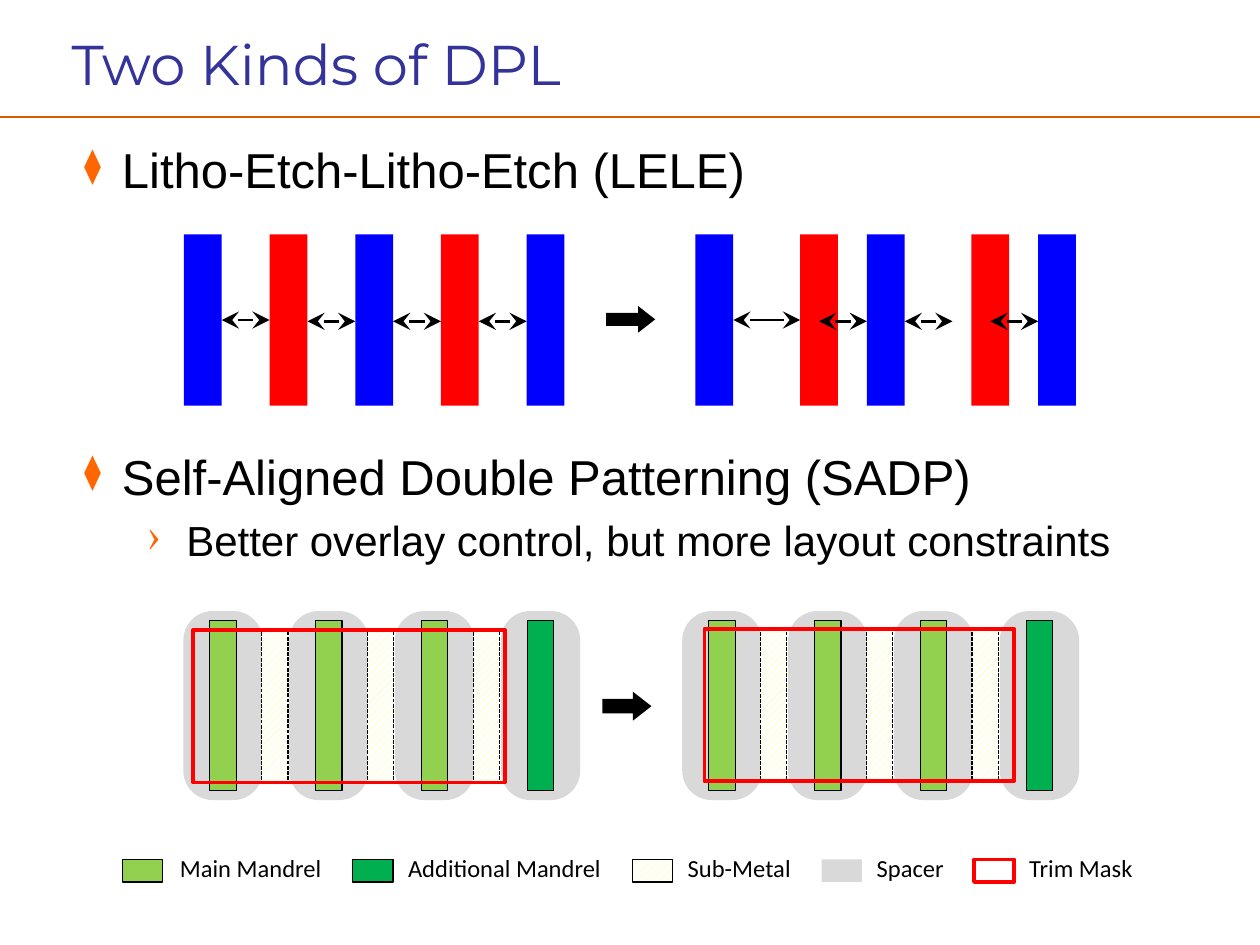
from lxml.etree import SubElement
from pptx import Presentation
from pptx.dml.color import RGBColor
from pptx.enum.dml import MSO_LINE, MSO_PATTERN
from pptx.enum.shapes import MSO_CONNECTOR, MSO_SHAPE
from pptx.enum.text import MSO_ANCHOR
from pptx.oxml.ns import qn
from pptx.util import Inches, Pt

BLACK, BLUE, RED, ORANGE = "000000", "0000FF", "FF0000", "FF6600"
HATCH = "hatch"

# fill, line colour, line width
STYLES = {
    "main": ("92D050", BLACK, 0.75),
    "additional": ("00B050", BLACK, 0.75),
    "sub-metal": (HATCH, BLACK, 0.75),
    "spacer": ("D9D9D9", None, 0),
    "trim": (None, RED, 2),
}
TITLE = "Two Kinds of DPL"
# text, size, space before, left margin, indent, bullet, bullet size
BULLETS = [
    ("Litho-Etch-Litho-Etch (LELE)", 28, 0, 0.43, -0.3, "⧫", 70),
    ("Self-Aligned Double Patterning (SADP)", 28, 141.5, 0.43, -0.3, "⧫", 70),
    ("Better overlay control, but more layout constraints", 24, 5.5, 0.94, -0.31, "›", 100),
]
# left edge of the first bar, overlay shift of the red bars
LELE_PANELS = [(1.46, 0), (5.52, 0.15)]
# centre of the first mandrel, trim mask box
SADP_PANELS = [
    (5.73, (5.59, 4.99, 2.46, 1.21)),
    (1.77, (1.53, 5, 2.48, 1.21)),
]
STEP_ARROWS = [(4.81, 2.43, 0.39, 0.21), (4.78, 5.49, 0.39, 0.23)]
# style, label, swatch left, label left, label width
LEGEND = [
    ("main", "Main Mandrel", 0.97, 1.33, 1.34),
    ("additional", "Additional Mandrel", 2.8, 3.14, 1.75),
    ("sub-metal", "Sub-Metal", 5.02, 5.36, 1.03),
    ("spacer", "Spacer", 6.52, 6.86, 0.74),
    ("trim", "Trim Mask", 7.73, 8.07, 1.03),
]

BAR_TOP, BAR_WIDTH, BAR_HEIGHT, BAR_PITCH = 1.86, 0.3, 1.36, 0.68
SADP_MIDDLE, SADP_PITCH, SUB_OFFSET = 5.6, 0.84, 0.41


def color(value):
    return RGBColor.from_string(value)


def add_shape(page, kind, place, fill=None, line=None, width=0):
    shape = page.shapes.add_shape(kind, *map(Inches, place))
    shape.shadow.inherit = False
    if fill == HATCH:
        shape.fill.patterned()
        shape.fill.pattern = MSO_PATTERN.WIDE_UPWARD_DIAGONAL
        shape.fill.fore_color.rgb = color("FFFF66")
        shape.fill.back_color.rgb = color("FFFFFF")
    elif fill:
        shape.fill.solid()
        shape.fill.fore_color.rgb = color(fill)
    else:
        shape.fill.background()
    if line:
        shape.line.color.rgb = color(line)
        shape.line.width = Pt(width)
    else:
        shape.line.fill.background()
    return shape


def add_line(page, start, end, y, line, width, arrows=False):
    connector = page.shapes.add_connector(
        MSO_CONNECTOR.STRAIGHT, *map(Inches, (start, y, end, y)))
    connector.line.color.rgb = color(line)
    connector.line.width = Pt(width)
    if arrows:
        for tag in ("a:headEnd", "a:tailEnd"):
            SubElement(connector.line._get_or_add_ln(), qn(tag),
                       type="stealth", w="lg", len="lg")
    SubElement(connector._element.spPr, qn("a:effectLst"))


def add_text_box(page, place, wrap=True):
    box = page.shapes.add_textbox(*map(Inches, place))
    box.text_frame.word_wrap = wrap
    return box.text_frame


def set_font(para, name, size, value):
    para.font.name = name
    para.font.size = Pt(size)
    para.font.color.rgb = color(value)


def add_heading(page):
    add_line(page, 0, 10, 0.93, "D55C01", 1)
    frame = add_text_box(page, (0.47, 0.11, 9.05, 0.78))
    frame.vertical_anchor = MSO_ANCHOR.MIDDLE
    frame.text = TITLE
    set_font(frame.paragraphs[0], "Montserrat", 32, "333399")


def add_bullets(page):
    frame = add_text_box(page, (0.44, 1.06, 9.16, 5.8))
    frame.text = "\n".join(item[0] for item in BULLETS)
    for para, item in zip(frame.paragraphs, BULLETS):
        _, size, before, margin, indent, char, percent = item
        properties = para._p.get_or_add_pPr()
        properties.set("marL", str(Inches(margin)))
        properties.set("indent", str(Inches(indent)))
        SubElement(SubElement(properties, qn("a:buClr")), qn("a:srgbClr"), val=ORANGE)
        SubElement(properties, qn("a:buSzPct"), val=str(percent * 1000))
        SubElement(properties, qn("a:buChar"), char=char)
        para.space_before = Pt(before)
        set_font(para, "Arial", size, BLACK)


def add_lele_panel(page, left, shift):
    starts = [left + i * BAR_PITCH for i in range(5)]
    for i, start in enumerate(starts):
        offset, fill = (shift, RED) if i % 2 else (0, BLUE)
        add_shape(page, MSO_SHAPE.RECTANGLE,
                  (start + offset, BAR_TOP, BAR_WIDTH, BAR_HEIGHT), fill)
    for i, (start, following) in enumerate(zip(starts, starts[1:])):
        end, y = (following, 2.55) if i else (following + shift, 2.54)
        add_line(page, start + BAR_WIDTH, end, y, BLACK, 1.5, arrows=True)


def add_sadp_panel(page, first, trim_place):
    def add_strip(center, width, height, style, kind=MSO_SHAPE.RECTANGLE):
        place = (center - width / 2, SADP_MIDDLE - height / 2, width, height)
        return add_shape(page, kind, place, *STYLES[style])

    centers = [first + i * SADP_PITCH for i in range(4)]
    for center in centers:
        spacer = add_strip(center, 0.63, 1.5, "spacer", MSO_SHAPE.ROUNDED_RECTANGLE)
        spacer.adjustments[0] = 0.37
    for center in centers[:3]:
        metal = add_strip(center + SUB_OFFSET, 0.21, 1.22, "sub-metal")
        metal.line.dash_style = MSO_LINE.SQUARE_DOT
    for center in centers:
        add_strip(center, 0.21, 1.35, "additional" if center == centers[-1] else "main")
    add_shape(page, MSO_SHAPE.RECTANGLE, trim_place, *STYLES["trim"])


def add_legend(page):
    for style, label, swatch_left, label_left, width in LEGEND:
        add_shape(page, MSO_SHAPE.RECTANGLE, (swatch_left, 6.82, 0.32, 0.18), *STYLES[style])
        frame = add_text_box(page, (label_left, 6.72, width, 0.34), wrap=False)
        frame.text = label
        set_font(frame.paragraphs[0], "Calibri", 14, BLACK)


def main():
    deck = Presentation()
    deck.slide_width, deck.slide_height = Inches(10), Inches(7.5)
    page = deck.slides.add_slide(deck.slide_layouts[6])
    add_heading(page)
    add_bullets(page)
    for panel in LELE_PANELS:
        add_lele_panel(page, *panel)
    for panel in SADP_PANELS:
        add_sadp_panel(page, *panel)
    for place in STEP_ARROWS:
        arrow = add_shape(page, MSO_SHAPE.RIGHT_ARROW, place, BLACK)
        arrow.adjustments[1] = 0.64
    add_legend(page)
    deck.save("out.pptx")


if __name__ == "__main__":
    main()
